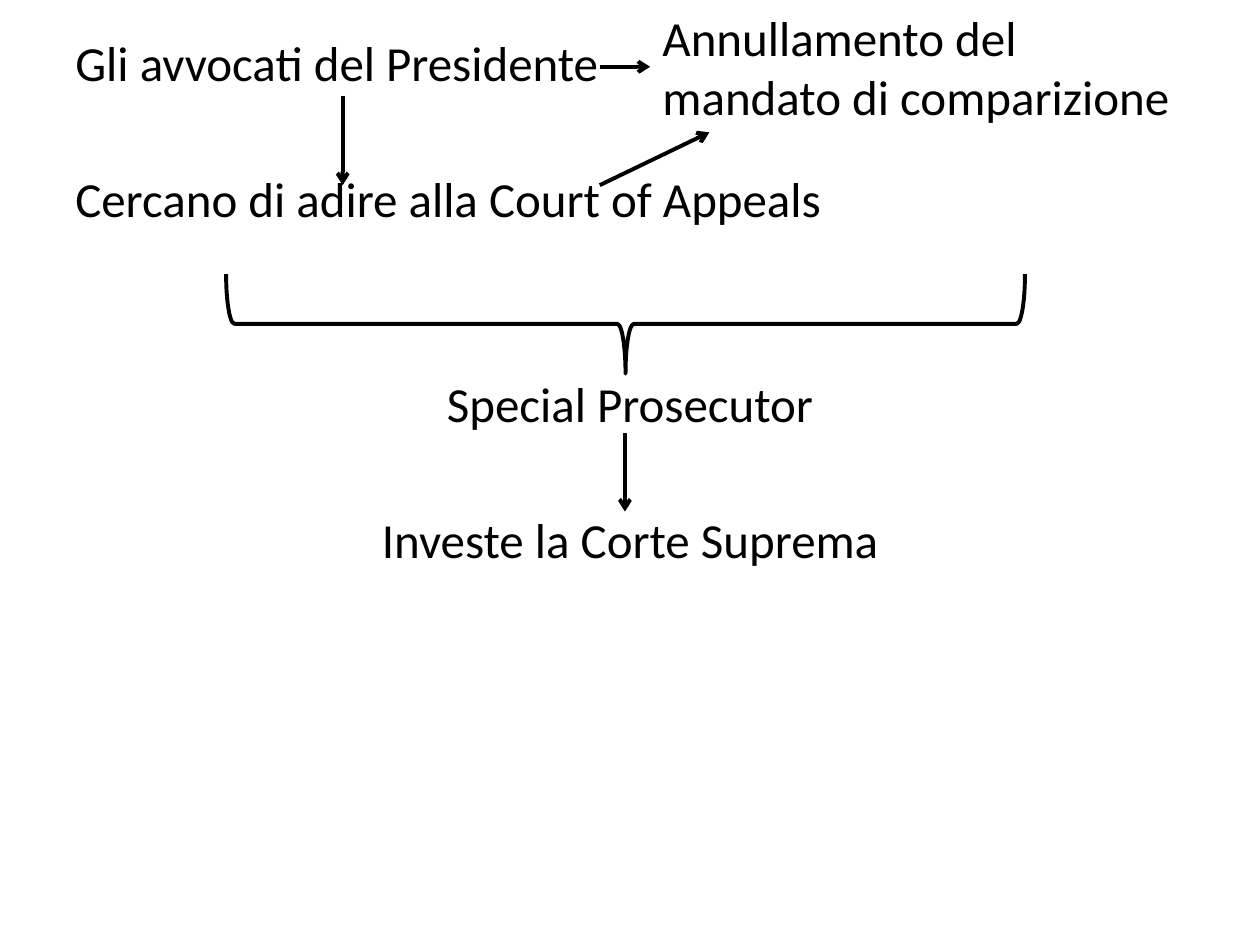
from typing import NamedTuple

from lxml.etree import SubElement
from pptx import Presentation
from pptx.dml.color import RGBColor
from pptx.enum.shapes import MSO_CONNECTOR, MSO_SHAPE
from pptx.enum.text import MSO_ANCHOR, PP_ALIGN
from pptx.oxml.ns import qn
from pptx.shapes.autoshape import Shape
from pptx.shapes.connector import Connector
from pptx.slide import Slide
from pptx.util import Inches, Pt

BLACK = RGBColor(0x00, 0x00, 0x00)
WHITE = RGBColor(0xFF, 0xFF, 0xFF)
FONT = "Calibri"
FONT_SIZE = Pt(28)
LINE_WIDTH = Pt(2.25)
STEP_GAP = 44  # points between consecutive steps
BRACE_GAP = 83.5  # points left free for the brace


class Step(NamedTuple):
    text: str
    gap_before: float = 0
    align: PP_ALIGN = PP_ALIGN.LEFT


class Arrow(NamedTuple):
    x1: float
    y1: float
    x2: float
    y2: float


STEPS = [
    Step("Gli avvocati del Presidente"),
    Step("Cercano di adire alla Court of Appeals", STEP_GAP),
    Step("Special Prosecutor", BRACE_GAP, PP_ALIGN.CENTER),
    Step("Investe la Corte Suprema", STEP_GAP, PP_ALIGN.CENTER),
]
OUTCOME = [Step("Annullamento del mandato di comparizione")]

LAWYERS_TO_OUTCOME = Arrow(4.76, 0.53, 5.16, 0.53)
OTHER_ARROWS = [
    Arrow(2.72, 0.76, 2.72, 1.47),  # lawyers to Court of Appeals
    Arrow(4.76, 1.47, 5.63, 1.05),  # Court of Appeals to outcome
    Arrow(4.96, 3.44, 4.96, 4.06),  # prosecutor to Supreme Court
]


def add_steps(slide: Slide, steps: list[Step], left: float, top: float,
              width: float, height: float) -> Shape:
    box = slide.shapes.add_textbox(Inches(left), Inches(top), Inches(width), Inches(height))
    frame = box.text_frame
    frame.word_wrap = True
    frame.vertical_anchor = MSO_ANCHOR.TOP
    for index, step in enumerate(steps):
        paragraph = frame.add_paragraph() if index else frame.paragraphs[0]
        paragraph.text = step.text
        paragraph.alignment = step.align
        paragraph.space_before = Pt(step.gap_before)
        paragraph.font.name = FONT
        paragraph.font.size = FONT_SIZE
        paragraph.font.color.rgb = BLACK
    return box


def add_arrow(slide: Slide, arrow: Arrow) -> Connector:
    connector = slide.shapes.add_connector(
        MSO_CONNECTOR.STRAIGHT, *(Inches(length) for length in arrow))
    connector.line.color.rgb = BLACK
    connector.line.width = LINE_WIDTH
    SubElement(connector.line._get_or_add_ln(), qn("a:tailEnd"), type="arrow")
    SubElement(connector._element.spPr, qn("a:effectLst"))  # no shadow
    return connector


def add_brace(slide: Slide) -> None:
    brace = slide.shapes.add_shape(
        MSO_SHAPE.LEFT_BRACE, Inches(4.57), Inches(-0.6), Inches(0.79), Inches(6.34))
    brace.rotation = 270
    brace.shadow.inherit = False
    brace.fill.background()
    brace.line.color.rgb = BLACK
    brace.line.width = LINE_WIDTH


def main() -> None:
    presentation = Presentation()
    presentation.slide_width = Inches(10)
    presentation.slide_height = Inches(7.5)
    slide = presentation.slides.add_slide(presentation.slide_layouts[6])
    slide.background.fill.solid()
    slide.background.fill.fore_color.rgb = WHITE

    # Steps of the proceedings and their outcome
    add_steps(slide, STEPS, 0.5, 0.21, 9, 7.09)
    outcome = add_steps(slide, OUTCOME, 5.16, 0.01, 4.33, 1.04)

    # Arrows between the steps
    add_arrow(slide, LAWYERS_TO_OUTCOME).end_connect(outcome, 1)
    for arrow in OTHER_ARROWS:
        add_arrow(slide, arrow)

    # Brace leading to the prosecutor
    add_brace(slide)

    presentation.save("out.pptx")


if __name__ == "__main__":
    main()
